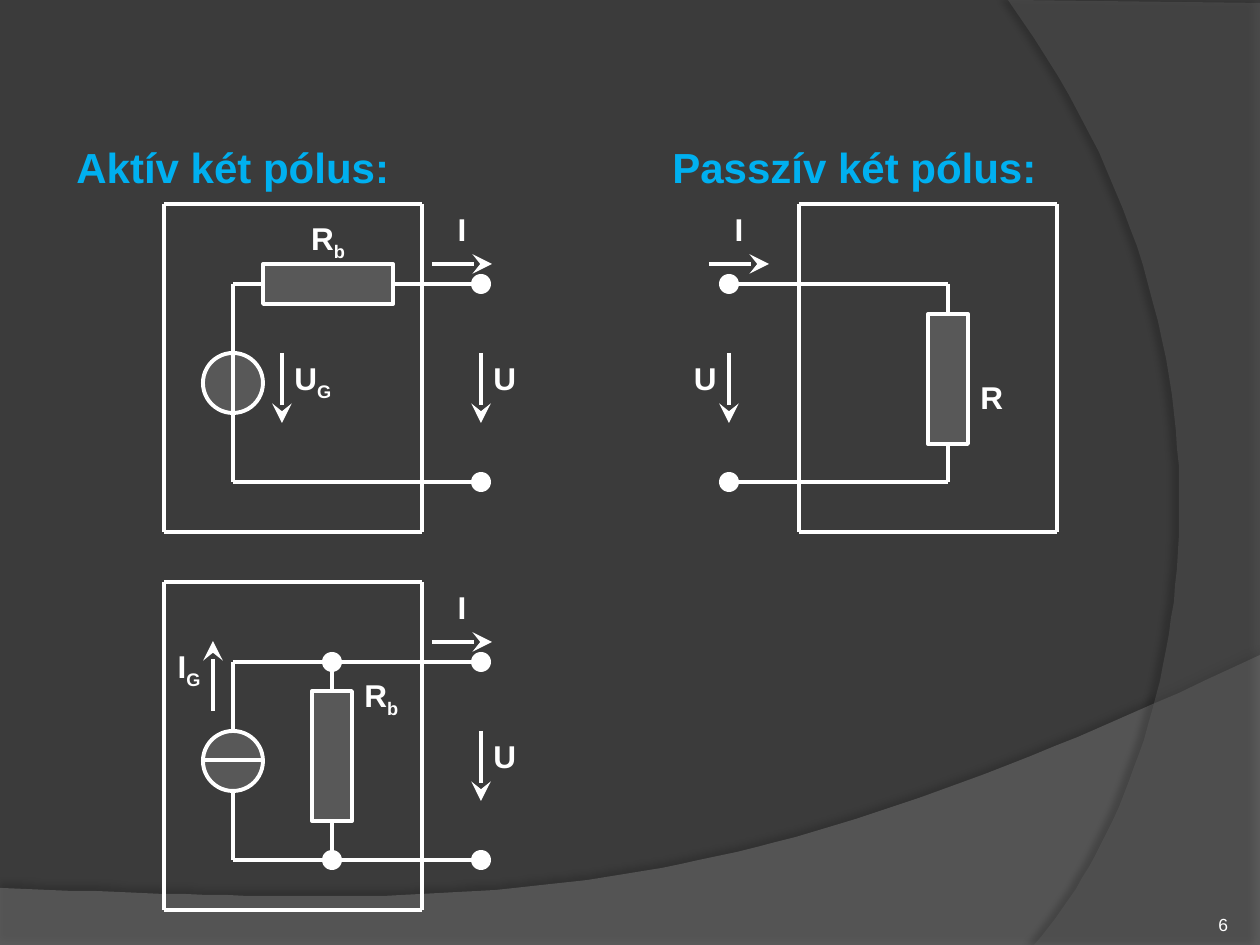
from dataclasses import dataclass

from lxml import etree
from pptx import Presentation
from pptx.dml.color import RGBColor
from pptx.enum.shapes import MSO_CONNECTOR, MSO_SHAPE
from pptx.enum.text import MSO_ANCHOR, PP_ALIGN
from pptx.oxml.ns import qn
from pptx.util import Pt

PX = 914400 / 126
LEFT, CENTER, RIGHT = PP_ALIGN.LEFT, PP_ALIGN.CENTER, PP_ALIGN.RIGHT


@dataclass(frozen=True)
class Theme:
    font: str = "Arial"
    background: str = "3B3B3B"
    ink: str = "FFFFFF"
    heading: str = "00B0F0"
    wave: str = "7F7F7F"
    arc: str = "5E5E5E"
    heading_size: int = 24
    label_size: int = 18
    number_size: int = 10
    line: float = 2.25
    part_alpha: int = 15


T = Theme()

# Backdrop: corner points, then a Bezier from the last corner back to the start
# (two controls, end); fill, alpha, shadow (alpha, blur pt, distance pt, angle)
BACKDROP = [
    ([(0, 888), (0, 946), (1260, 946), (1260, 655)],
     [(704, 919), (493, 906), (0, 888)], T.wave, 45, (35, 4, 3.5, 270)),
    ([(1260, 3), (1260, 945), (1034, 945)],
     [(1178, 780), (1283, 378), (1008, 0)], T.arc, 40, (45, 4, 4, 180)),
]
HEADINGS = [("Aktív két pólus:", 64, 348), ("Passzív két pólus:", 660, 427)]

# Frame left, frame top, terminal x, start of current arrow, U label left, U alignment
FRAME_W, FRAME_H = 258, 328
TOP_WIRE, BOTTOM_WIRE = 80, 278
TWO_POLES = [
    (164, 204, 481, 432, 481, LEFT),
    (164, 582, 481, 432, 481, LEFT),
    (799, 204, 729, 709, 669, RIGHT),
]
RESISTORS = [(263, 264, 130, 40), (312, 691, 40, 130), (928, 314, 40, 130)]
# Circle box, then the line across it
SOURCES = [
    ((203, 353, 60, 60), ((233, 353), (233, 413))),
    ((203, 731, 60, 60), ((203, 760), (263, 760))),
]
WIRES = [
    [(393, 284), (481, 284)],
    [(263, 284), (233, 284), (233, 353)],
    [(233, 413), (233, 482), (481, 482)],
    [(481, 662), (233, 662), (233, 731)],
    [(233, 791), (233, 860), (481, 860)],
    [(332, 662), (332, 691)],
    [(332, 821), (332, 860)],
    [(729, 284), (948, 284), (948, 314)],
    [(729, 482), (948, 482), (948, 444)],
]
NODES = [(332, 662), (332, 860)]
ARROWS = [((282, 353), (282, 423)), ((213, 711), (213, 641))]
# Text, subscript, left, top, width, alignment
LABELS = [
    ("R", "b", 263, 213, 130, CENTER),
    ("U", "G", 282, 353, 80, LEFT),
    ("I", "G", 134, 641, 79, RIGHT),
    ("R", "b", 352, 670, 70, LEFT),
    ("R", "", 968, 372, 70, LEFT),
]


def emu(*values):
    return [round(v * PX) for v in values]


def fill(sp, color, alpha=100):
    sp.shadow.inherit = False
    sp.fill.solid()
    sp.fill.fore_color.rgb = RGBColor.from_string(color)
    if alpha < 100:
        clr = sp.fill._xPr.find(qn("a:solidFill"))[0]
        etree.SubElement(clr, qn("a:alpha"), val=str(alpha * 1000))


def outline(sp):
    sp.line.color.rgb = RGBColor.from_string(T.ink)
    sp.line.width = Pt(T.line)


def add_backdrop(s, corners, curve, color, alpha, shadow):
    p0, (p1, p2, p3) = corners[-1], curve
    steps = 60
    bend = []
    for t in (i / steps for i in range(1, steps + 1)):
        u = 1 - t
        bend.append(tuple(u**3 * a + 3 * u * u * t * b + 3 * u * t * t * c + t**3 * d
                          for a, b, c, d in zip(p0, p1, p2, p3)))
    builder = s.shapes.build_freeform(*corners[0], scale=PX)
    builder.add_line_segments(corners[1:] + bend, close=True)
    sp = builder.convert_to_shape()
    fill(sp, color, alpha)
    sp.line.fill.background()
    opacity, blur, distance, angle = shadow
    effects = sp._element.spPr.find(qn("a:effectLst"))
    shade = etree.SubElement(effects, qn("a:outerShdw"), blurRad=str(Pt(blur)),
                             dist=str(Pt(distance)), dir=str(angle * 60000), rotWithShape="0")
    clr = etree.SubElement(shade, qn("a:srgbClr"), val="000000")
    etree.SubElement(clr, qn("a:alpha"), val=str(opacity * 1000))


def add_part(shapes, kind, box):
    sp = shapes.add_shape(kind, *emu(*box))
    fill(sp, T.ink, T.part_alpha)
    outline(sp)
    return sp


def add_dot(s, x, y):
    sp = s.shapes.add_shape(MSO_SHAPE.OVAL, *emu(x - 10, y - 10, 20, 20))
    fill(sp, T.ink)
    sp.line.fill.background()


def add_line(shapes, start, end, joints=None, arrow=False):
    """Draw a line, joined to a part wherever an end is one of its joints."""
    joints = joints or {}
    c = shapes.add_connector(MSO_CONNECTOR.STRAIGHT, *emu(*start, *end))
    outline(c)
    etree.SubElement(c._element.spPr, qn("a:effectLst"))
    if start in joints:
        c.begin_connect(*joints[start])
    if end in joints:
        c.end_connect(*joints[end])
    if arrow:
        etree.SubElement(c.line._get_or_add_ln(), qn("a:tailEnd"),
                         type="stealth", w="lg", len="lg")


def add_text(s, text, box, size, color=T.ink, bold=True, align=LEFT, sub=""):
    tb = s.shapes.add_textbox(*emu(*box))
    tf = tb.text_frame
    tf.word_wrap = True
    p = tf.paragraphs[0]
    p.alignment = align
    p.font.name, p.font.size, p.font.bold = T.font, Pt(size), bold
    p.font.color.rgb = RGBColor.from_string(color)
    p.add_run().text = text
    if sub:
        r = p.add_run()
        r.text = sub
        r._r.get_or_add_rPr().set("baseline", "-25000")
    return tf


def add_two_pole(s, x, y, port, current, u_left, u_align):
    """Draw the frame, terminals, and the I and U arrows with their labels."""
    right, bottom = x + FRAME_W, y + FRAME_H
    corners = [(x, y), (right, y), (right, bottom), (x, bottom)]
    for start, end in zip(corners, corners[1:] + corners[:1]):
        add_line(s.shapes, start, end)
    for offset in (TOP_WIRE, BOTTOM_WIRE):
        add_dot(s, port, y + offset)
    add_line(s.shapes, (current, y + 60), (current + 60, y + 60), arrow=True)
    add_line(s.shapes, (port, y + 149), (port, y + 219), arrow=True)
    add_text(s, "I", (current, y, 60, 50), T.label_size, align=CENTER)
    add_text(s, "U", (u_left, y + 149, 60, 50), T.label_size, align=u_align)


def main():
    prs = Presentation()
    prs.slide_width, prs.slide_height = emu(1260, 945)
    s = prs.slides.add_slide(prs.slide_layouts[6])
    s.background.fill.solid()
    s.background.fill.fore_color.rgb = RGBColor.from_string(T.background)
    for item in BACKDROP:
        add_backdrop(s, *item)
    tf = add_text(s, "6", (1124, 885, 104, 50), T.number_size, bold=False, align=RIGHT)
    tf.vertical_anchor = MSO_ANCHOR.BOTTOM
    tf.margin_left = tf.margin_right = tf.margin_top = tf.margin_bottom = 0
    for text, x, w in HEADINGS:
        add_text(s, text, (x, 135, w, 63), T.heading_size, T.heading)

    joints = {}
    for x, y, w, h in RESISTORS:
        sp = add_part(s.shapes, MSO_SHAPE.RECTANGLE, (x, y, w, h))
        sides = [(x + w // 2, y), (x, y + h // 2), (x + w // 2, y + h), (x + w, y + h // 2)]
        joints.update({side: (sp, site) for site, side in enumerate(sides)})
    for box, (start, end) in SOURCES:
        group = s.shapes.add_group_shape()
        add_part(group.shapes, MSO_SHAPE.OVAL, box)
        add_line(group.shapes, start, end)
    for wire in WIRES:
        for start, end in zip(wire, wire[1:]):
            add_line(s.shapes, start, end, joints)
    for two_pole in TWO_POLES:
        add_two_pole(s, *two_pole)
    for node in NODES:
        add_dot(s, *node)
    for start, end in ARROWS:
        add_line(s.shapes, start, end, arrow=True)
    for text, sub, x, y, w, align in LABELS:
        add_text(s, text, (x, y, w, 50), T.label_size, align=align, sub=sub)
    prs.save("out.pptx")


if __name__ == "__main__":
    main()
